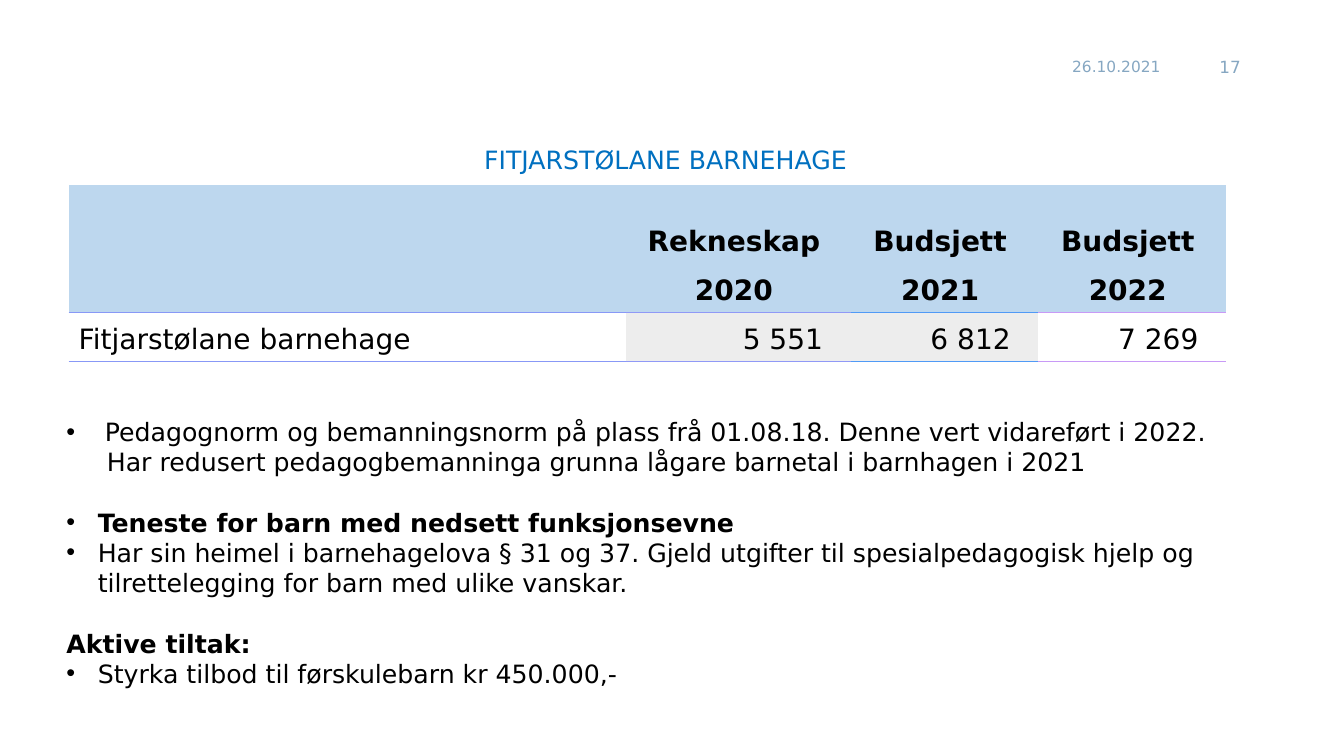
import lxml.etree
import pptx
import pptx.dml.color
import pptx.enum.text
import pptx.oxml.ns
import pptx.util

Cm = pptx.util.Cm
Pt = pptx.util.Pt
ALIGN = pptx.enum.text.PP_ALIGN
ANCHOR = pptx.enum.text.MSO_ANCHOR
qn = pptx.oxml.ns.qn

FONT = "DejaVu Sans"
MUTED = "86A7C2"
HEADER_FILL = "BDD7EE"
PLAIN_STYLE = "{2D5ABB26-0587-4C30-8999-92F81FD0307C}"
LINE_PITCH = 21.6

COLUMN_WIDTHS = [14.05, 5.66, 4.73, 4.73]
ROW_HEIGHTS = [1.96, 1.24, 1.24]
RULE_COLOURS = ["8898F6", "9099F6", "509AF6", "C89AF6"]
VALUE_FILLS = [None, "EDEDED", "EDEDED", None]
BUDGET = [
    ["", "Rekneskap", "Budsjett", "Budsjett"],
    ["", "2020", "2021", "2022"],
    ["Fitjarstølane barnehage", "5 551", "6 812", "7 269"],
]

# text, bold, bullet, left indent in cm, blank lines before
NOTES = [
    ("Pedagognorm og bemanningsnorm på plass frå 01.08.18. "
     "Denne vert vidareført i 2022.", False, True, 0.97, 0),
    ("Har redusert pedagogbemanninga grunna lågare barnetal i barnhagen i 2021",
     False, False, 1.02, 0),
    ("Teneste for barn med nedsett funksjonsevne", True, True, 0.79, 1),
    ("Har sin heimel i barnehagelova § 31 og 37. Gjeld utgifter til "
     "spesialpedagogisk hjelp og tilrettelegging for barn med ulike vanskar.",
     False, True, 0.79, 0),
    ("Aktive tiltak:", True, False, 0, 1),
    ("Styrka tilbod til førskulebarn kr 450.000,-", False, True, 0.79, 0),
]


def colour(value):
    return pptx.dml.color.RGBColor.from_string(value)


def format_runs(paragraph, size, text_colour="000000", bold=False):
    for run in paragraph.runs:
        run.font.name = FONT
        run.font.size = Pt(size)
        run.font.bold = bold
        run.font.color.rgb = colour(text_colour)


def place(shape, left, top, width, height, anchor):
    shape.left, shape.top = Cm(left), Cm(top)
    shape.width, shape.height = Cm(width), Cm(height)
    frame = shape.text_frame
    frame.word_wrap = True
    frame.auto_size = pptx.enum.text.MSO_AUTO_SIZE.NONE
    frame.vertical_anchor = anchor
    return frame


def add_label(slide, text, left, width, size, alignment):
    label = slide.shapes.add_textbox(0, 0, 0, 0)
    frame = place(label, left, 1.17, width, 1.02, ANCHOR.MIDDLE)
    frame.text = text
    frame.paragraphs[0].alignment = alignment
    format_runs(frame.paragraphs[0], size, MUTED)


def fill_title(slide, text):
    frame = place(slide.shapes.title, 1.42, 3.48, 30.71, 1.06, ANCHOR.MIDDLE)
    frame.text = text
    frame.paragraphs[0].alignment = ALIGN.CENTER
    format_runs(frame.paragraphs[0], 18, "0070C0")


def set_bullet(paragraph, bulleted, indent):
    properties = paragraph._p.get_or_add_pPr()
    properties.set("marL", str(Cm(indent)))
    properties.set("indent", str(-Cm(indent) if bulleted else 0))
    if bulleted:
        font = lxml.etree.SubElement(properties, qn("a:buFont"))
        font.set("typeface", "Arial")
        lxml.etree.SubElement(properties, qn("a:buChar")).set("char", "•")
    else:
        lxml.etree.SubElement(properties, qn("a:buNone"))


def fill_notes(slide):
    frame = place(slide.placeholders[1], 1.42, 10.36, 30.71, 7.22, ANCHOR.TOP)
    for index, (text, bold, bulleted, indent, gap) in enumerate(NOTES):
        note = frame.paragraphs[0] if index == 0 else frame.add_paragraph()
        note.text = text
        set_bullet(note, bulleted, indent)
        note.alignment = ALIGN.LEFT
        note.line_spacing = Pt(LINE_PITCH)
        note.space_before = Pt(gap * LINE_PITCH)
        note.space_after = Pt(0)
        format_runs(note, 18, bold=bold)


def add_border(cell, side, line_colour):
    line = lxml.etree.Element(qn(side), w=str(Pt(0.75)))
    fill = lxml.etree.SubElement(line, qn("a:solidFill"))
    lxml.etree.SubElement(fill, qn("a:srgbClr")).set("val", line_colour)
    cell._tc.get_or_add_tcPr().insert(0, line)


def fill_cell(cell, text, alignment, bold, fill, right_margin):
    cell.text = text
    cell.vertical_anchor = ANCHOR.BOTTOM
    cell.margin_right = Cm(right_margin)
    paragraph = cell.text_frame.paragraphs[0]
    paragraph.alignment = alignment
    format_runs(paragraph, 20, bold=bold)
    if fill:
        cell.fill.solid()
        cell.fill.fore_color.rgb = colour(fill)
    else:
        cell.fill.background()


def add_budget_table(slide):
    frame = slide.shapes.add_table(
        len(BUDGET), len(COLUMN_WIDTHS), Cm(1.73), Cm(4.67),
        Cm(sum(COLUMN_WIDTHS)), Cm(sum(ROW_HEIGHTS)))
    table = frame.table
    table.first_row = table.horz_banding = False
    table._tbl.tblPr.find(qn("a:tableStyleId")).text = PLAIN_STYLE
    for column, width in zip(table.columns, COLUMN_WIDTHS):
        column.width = Cm(width)
    for row, height in zip(table.rows, ROW_HEIGHTS):
        row.height = Cm(height)
    for row, texts in enumerate(BUDGET):
        for column, text in enumerate(texts):
            cell = table.cell(row, column)
            if row < 2:
                fill_cell(cell, text, ALIGN.CENTER, True, HEADER_FILL, 0.48)
            else:
                alignment = ALIGN.RIGHT if column else ALIGN.LEFT
                fill_cell(cell, text, alignment, False, VALUE_FILLS[column], 0.7)
            if row > 0:
                add_border(cell, "a:lnB", RULE_COLOURS[column])
            if row == 2:
                add_border(cell, "a:lnT", RULE_COLOURS[column])


def main():
    deck = pptx.Presentation()
    deck.slide_width, deck.slide_height = Cm(33.87), Cm(19.05)
    slide = deck.slides.add_slide(deck.slide_layouts[1])
    add_label(slide, "26.10.2021", 26.77, 2.92, 11, ALIGN.LEFT)
    add_label(slide, "17", 30.07, 1.45, 12, ALIGN.RIGHT)
    fill_title(slide, "FITJARSTØLANE BARNEHAGE")
    fill_notes(slide)
    add_budget_table(slide)
    deck.save("out.pptx")


if __name__ == "__main__":
    main()
